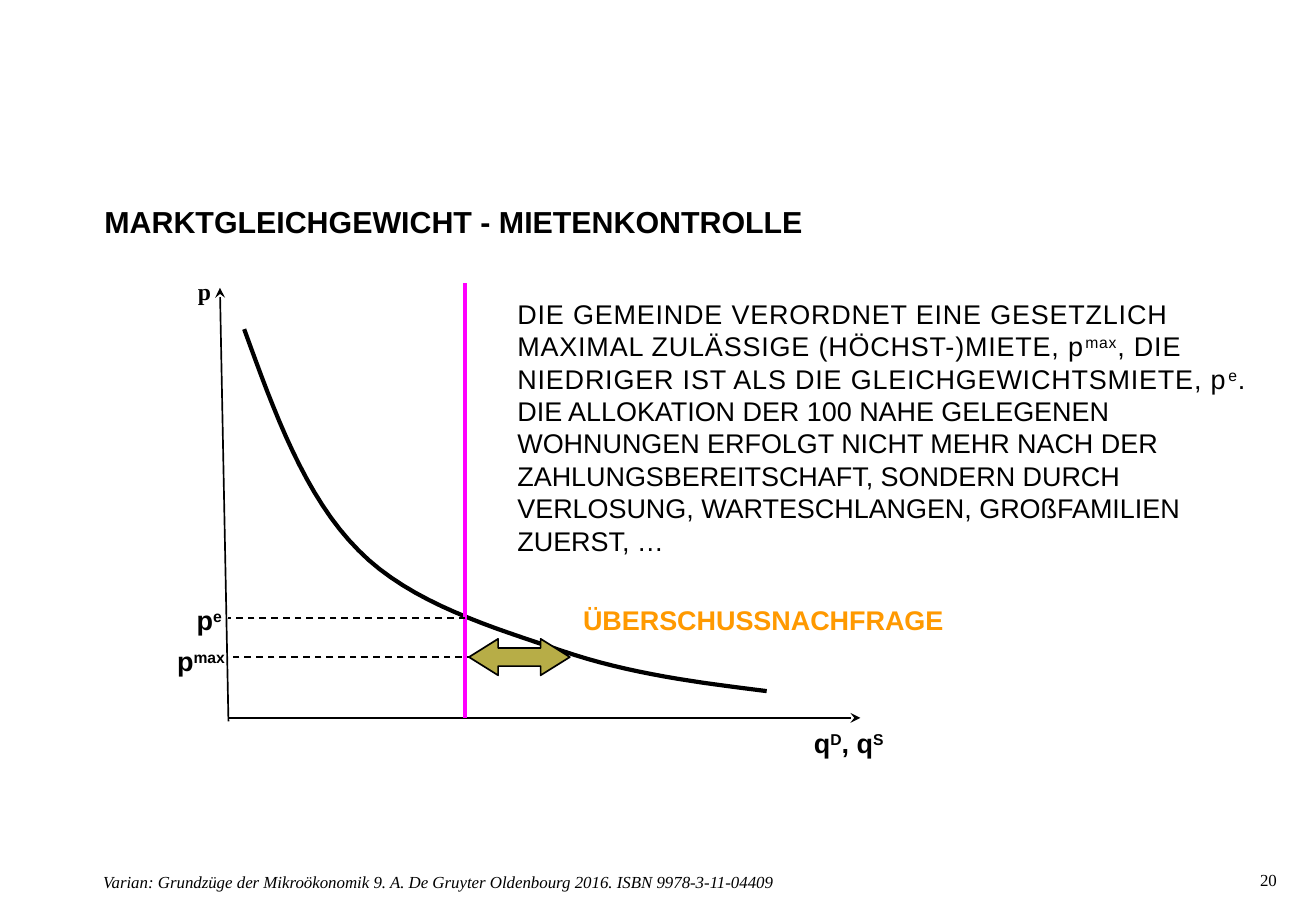
from dataclasses import dataclass

from lxml import etree
from pptx import Presentation
from pptx.dml.color import RGBColor
from pptx.enum import dml, shapes, text
from pptx.oxml import ns
from pptx.util import Inches, Pt


@dataclass(frozen=True)
class Theme:
    sans: str = "Arial"
    serif: str = "Times New Roman"
    ink: str = "000000"
    supply: str = "FF00FF"
    gap: str = "B7AD47"
    accent: str = "FF9900"
    title: float = 18
    body: float = 16
    axis: float = 14
    footer: float = 10
    thin: float = 1
    thick: float = 2.5


THEME = Theme()


def add_text(slide, box, runs, size=THEME.body, font=THEME.sans, color=THEME.ink,
             bold=False, italic=False, inset=True, wrap=True):
    frame = slide.shapes.add_textbox(*map(Inches, box)).text_frame
    frame.word_wrap = wrap
    if not inset:
        frame.margin_left = frame.margin_right = frame.margin_top = frame.margin_bottom = 0
    paragraph = frame.paragraphs[0]
    for index, content in enumerate(runs):
        run = paragraph.add_run()
        run.text = content
        run.font.size, run.font.name = Pt(size), font
        run.font.bold, run.font.italic = bold, italic
        run.font.color.rgb = RGBColor.from_string(color)
        if index % 2:
            run.font._element.set("baseline", "30000")
    return frame


def style_line(line, color=THEME.ink, width=THEME.thin):
    line.color.rgb = RGBColor.from_string(color)
    line.width = Pt(width)


def add_line(slide, start, end, color=THEME.ink, width=THEME.thin, dashed=False, arrow=False):
    connector = slide.shapes.add_connector(
        shapes.MSO_CONNECTOR.STRAIGHT, *map(Inches, (*start, *end)))
    style_line(connector.line, color, width)
    if dashed:
        connector.line.dash_style = dml.MSO_LINE.DASH
    properties = connector._element.spPr
    if arrow:
        etree.SubElement(properties.find(ns.qn("a:ln")), ns.qn("a:headEnd"), type="stealth")
    etree.SubElement(properties, ns.qn("a:effectLst"))


def bezier(points, steps=16):
    for first in range(0, len(points) - 1, 3):
        a, b, c, d = points[first:first + 4]
        for step in range(1, steps + 1):
            t = step / steps
            yield tuple((1 - t) ** 3 * p + 3 * (1 - t) ** 2 * t * q
                        + 3 * (1 - t) * t ** 2 * r + t ** 3 * s
                        for p, q, r, s in zip(a, b, c, d))


def add_market(slide, box):
    left, top, width, height = box
    origin_x, origin_y = 0.52, 3.68
    supply_x, price_e, price_max, excess_x = 2.47, 2.86, 3.18, 3.31

    def at(x, y):
        return left + x, top + y

    add_line(slide, at(0.45, 0.14), at(origin_x, origin_y + 0.03), arrow=True)
    add_line(slide, at(5.72, origin_y), at(origin_x, origin_y), arrow=True)

    demand = [at(*point) for point in (
        (0.65, 0.48), (0.9, 1.17), (1.15, 1.86), (1.59, 2.3), (2.02, 2.74),
        (2.71, 2.94), (3.27, 3.13), (3.83, 3.32), (4.39, 3.39), (4.95, 3.46))]
    builder = slide.shapes.build_freeform(*map(Inches, demand[0]), scale=1.0)
    builder.add_line_segments(
        [(Inches(x), Inches(y)) for x, y in bezier(demand)], close=False)
    curve = builder.convert_to_shape()
    curve.shadow.inherit = False
    curve.fill.background()
    style_line(curve.line, width=THEME.thick)

    add_line(slide, at(supply_x, origin_y), at(supply_x, 0.1), THEME.supply, THEME.thick)
    for price, end in ((price_e, supply_x), (price_max, excess_x)):
        add_line(slide, at(end, price), at(origin_x, price), dashed=True)

    for x, y, label_width, runs in (
            (width - 0.81, height - 0.37, 0.81, ["q", "D", ", q", "S"]),
            (0.16, price_e - 0.17, 0.42, ["p", "e"]),
            (0, price_max - 0.15, 0.64, ["p", "max"])):
        add_text(slide, (*at(x, y), label_width, 0.37), runs, bold=True, wrap=False)
    add_text(slide, (*at(0.17, 0), 0.31, 0.34), ["p"], THEME.axis, THEME.serif,
             bold=True, wrap=False)

    excess = slide.shapes.add_shape(
        shapes.MSO_SHAPE.LEFT_RIGHT_ARROW,
        *map(Inches, (*at(supply_x + 0.03, price_max - 0.15), 0.83, 0.3)))
    excess.shadow.inherit = False
    excess.adjustments[0], excess.adjustments[1] = 0.5, 0.8
    excess.fill.solid()
    excess.fill.fore_color.rgb = RGBColor.from_string(THEME.gap)
    style_line(excess.line)
    add_text(slide, (*at(excess_x + 0.03, price_e - 0.17), 3.19, 0.37),
             ["ÜBERSCHUSSNACHFRAGE"], color=THEME.accent, bold=True, wrap=False)


def add_explanation(slide, box):
    frame = add_text(slide, box, [
        "DIE GEMEINDE VERORDNET EINE GESETZLICH MAXIMAL ZULÄSSIGE (HÖCHST-)MIETE, p", "max",
        ", DIE NIEDRIGER IST ALS DIE GLEICHGEWICHTSMIETE, p", "e", ". "])
    paragraph = frame.paragraphs[0]
    paragraph.space_after = Pt(8)
    for run in paragraph.runs:
        run.font._element.set("spc", "50")
    paragraph.add_line_break()
    allocation = paragraph.add_run()
    allocation.text = ("DIE ALLOKATION DER 100 NAHE GELEGENEN WOHNUNGEN ERFOLGT NICHT MEHR "
                       "NACH DER ZAHLUNGSBEREITSCHAFT, SONDERN DURCH VERLOSUNG, "
                       "WARTESCHLANGEN, GROßFAMILIEN ZUERST, …")
    allocation.font.size, allocation.font.name = Pt(THEME.body), THEME.sans
    allocation.font.color.rgb = RGBColor.from_string(THEME.ink)


def add_title(slide, box):
    frame = add_text(slide, box, ["MARKTGLEICHGEWICHT - MIETENKONTROLLE"],
                     THEME.title, bold=True, inset=False)
    frame.vertical_anchor = text.MSO_ANCHOR.MIDDLE


def add_footer(slide, box):
    left, top, width, height = box
    add_text(slide, (left, top + 0.02, 9.4, height),
             ["Varian: Grundzüge der Mikroökonomik 9. A. De Gruyter Oldenbourg 2016. "
              "ISBN 9978-3-11-04409"], THEME.footer, THEME.serif, italic=True, inset=False)
    add_text(slide, (left + width - 0.39, top, 0.39, height), ["20"],
             THEME.footer, THEME.serif, inset=False)


def main():
    deck = Presentation()
    deck.slide_width, deck.slide_height = Inches(10.83), Inches(7.5)
    slide = deck.slides.add_slide(deck.slide_layouts[6])
    add_title(slide, (0.86, 1.64, 9.51, 0.36))
    add_market(slide, (1.36, 2.23, 6.05, 4.07))
    add_explanation(slide, (4.16, 2.4, 6.34, 2.26))
    add_footer(slide, (0.85, 7.16, 9.91, 0.2))
    deck.save("out.pptx")


if __name__ == "__main__":
    main()
